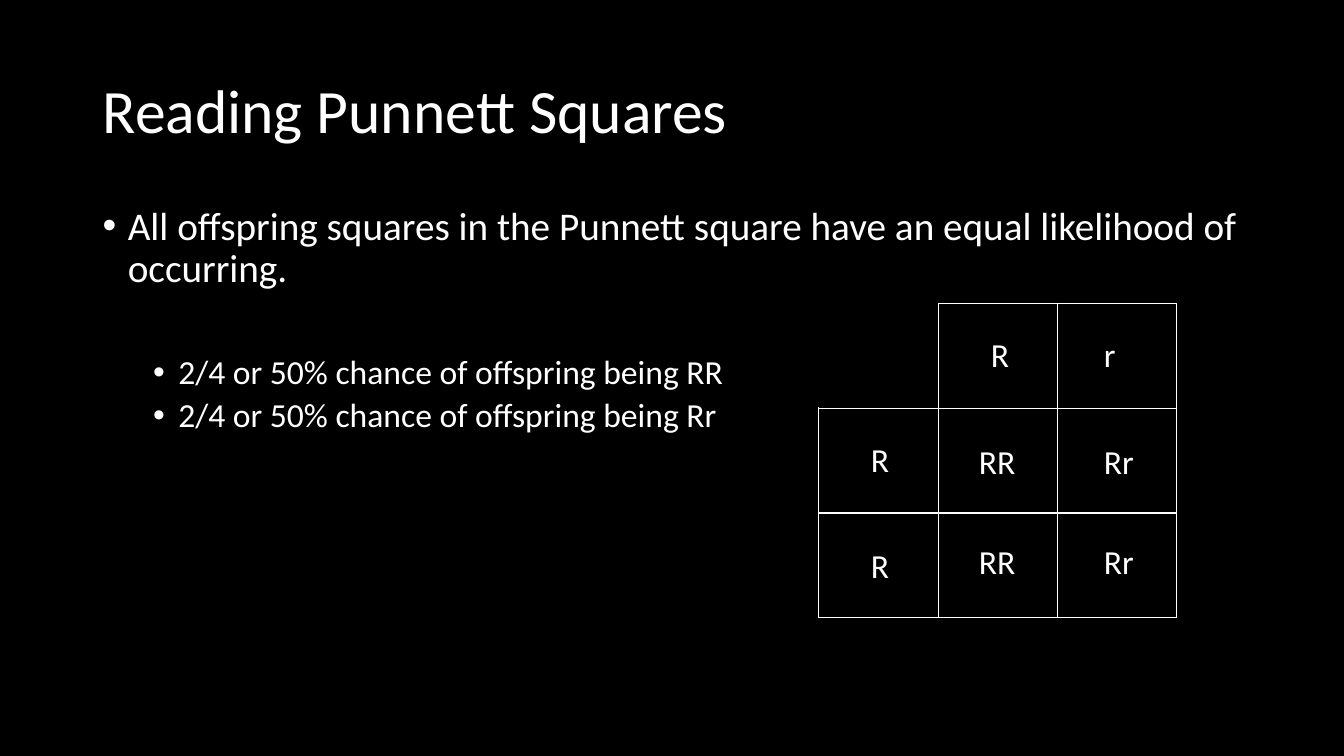
from dataclasses import dataclass
from itertools import product

from pptx import Presentation
from pptx.dml.color import RGBColor
from pptx.enum.shapes import MSO_SHAPE
from pptx.enum.text import MSO_ANCHOR
from pptx.oxml.ns import qn
from pptx.util import Inches, Pt
from lxml.etree import SubElement

TITLE = "Reading Punnett Squares"
POINTS = [
    ("All offspring squares in the Punnett square have an equal likelihood of occurring.", 0, 10),
    ("2/4 or 50% chance of offspring being RR", 1, 46),
    ("2/4 or 50% chance of offspring being Rr", 1, 5),
]
SQUARE = {"left": 8.12, "top": 3.01, "columns": (1.19, 1.18, 1.18), "rows": (1.04, 1.04, 1.04)}
EMPTY_CORNER = (8, 2.91, 1.3, 1.12)
ALLELES = [
    ("R", 9.73, 3.26, 2.38),
    ("r", 10.85, 3.26, 2.38),
    ("R", 8.54, 4.31, 0.34),
    ("R", 8.54, 5.36, 0.34),
]
OFFSPRING = [
    ("RR", 9.61, 4.33, 0.59),
    ("Rr", 10.85, 4.33, 2.38),
    ("RR", 9.61, 5.32, 0.59),
    ("Rr", 10.85, 5.32, 2.38),
]


@dataclass(frozen=True)
class Theme:
    font: str = "Calibri"
    background: str = "000000"
    ink: str = "FFFFFF"
    title_size: int = 44
    point_sizes: tuple = (28, 24)
    label_size: int = 24
    line_width: int = 1


THEME = Theme()


def add_run(paragraph, words, size):
    run = paragraph.add_run()
    run.text = words
    run.font.name = THEME.font
    run.font.size = Pt(size)
    run.font.color.rgb = RGBColor.from_string(THEME.ink)


def add_frame(slide, left, top, width, height, wrap=True):
    frame = slide.shapes.add_textbox(*map(Inches, (left, top, width, height))).text_frame
    frame.word_wrap = wrap
    return frame


def add_bullet(paragraph, level):
    paragraph.level = level
    properties = paragraph._p.get_or_add_pPr()
    properties.set("marL", str(Inches(0.25 + 0.5 * level)))
    properties.set("indent", str(Inches(-0.25)))
    SubElement(properties, qn("a:buFont"), typeface="Arial")
    SubElement(properties, qn("a:buChar"), char="•")


def add_points(slide):
    frame = add_frame(slide, 0.92, 2, 11.7, 4.76)
    for index, (words, level, space) in enumerate(POINTS):
        point = frame.add_paragraph() if index else frame.paragraphs[0]
        point.line_spacing = 0.9
        point.space_before = Pt(space)
        add_bullet(point, level)
        add_run(point, words, THEME.point_sizes[level])


def outline_cell(cell):
    properties = cell._tc.get_or_add_tcPr()
    for side in ("lnL", "lnR", "lnT", "lnB"):
        border = SubElement(properties, qn(f"a:{side}"), w=str(Pt(THEME.line_width)))
        SubElement(SubElement(border, qn("a:solidFill")), qn("a:srgbClr"), val=THEME.ink)
    cell.fill.background()


def add_square(slide):
    columns, rows = SQUARE["columns"], SQUARE["rows"]
    bounds = (SQUARE["left"], SQUARE["top"], sum(columns), sum(rows))
    square = slide.shapes.add_table(len(rows), len(columns), *map(Inches, bounds)).table
    square.first_row = square.horz_banding = False
    for column, width in zip(square.columns, columns):
        column.width = Inches(width)
    for row, height in zip(square.rows, rows):
        row.height = Inches(height)
    for row, column in product(range(len(rows)), range(len(columns))):
        outline_cell(square.cell(row, column))

    corner = slide.shapes.add_shape(MSO_SHAPE.RECTANGLE, *map(Inches, EMPTY_CORNER))
    corner.shadow.inherit = False
    corner.fill.solid()
    corner.fill.fore_color.rgb = RGBColor.from_string(THEME.background)
    corner.line.color.rgb = RGBColor.from_string(THEME.background)
    corner.line.width = Pt(THEME.line_width)

    for letters, left, top, width in ALLELES + OFFSPRING:
        label = add_frame(slide, left, top, width, 0.5, wrap=width > 1)
        add_run(label.paragraphs[0], letters, THEME.label_size)


def main():
    deck = Presentation()
    deck.slide_width, deck.slide_height = Inches(13.33), Inches(7.5)
    slide = deck.slides.add_slide(deck.slide_layouts[6])
    slide.background.fill.solid()
    slide.background.fill.fore_color.rgb = RGBColor.from_string(THEME.background)

    heading = add_frame(slide, 0.92, 0.4, 11.5, 1.45)
    heading.vertical_anchor = MSO_ANCHOR.MIDDLE
    heading.paragraphs[0].line_spacing = 0.9
    add_run(heading.paragraphs[0], TITLE, THEME.title_size)

    add_points(slide)
    add_square(slide)
    deck.save("out.pptx")


if __name__ == "__main__":
    main()
